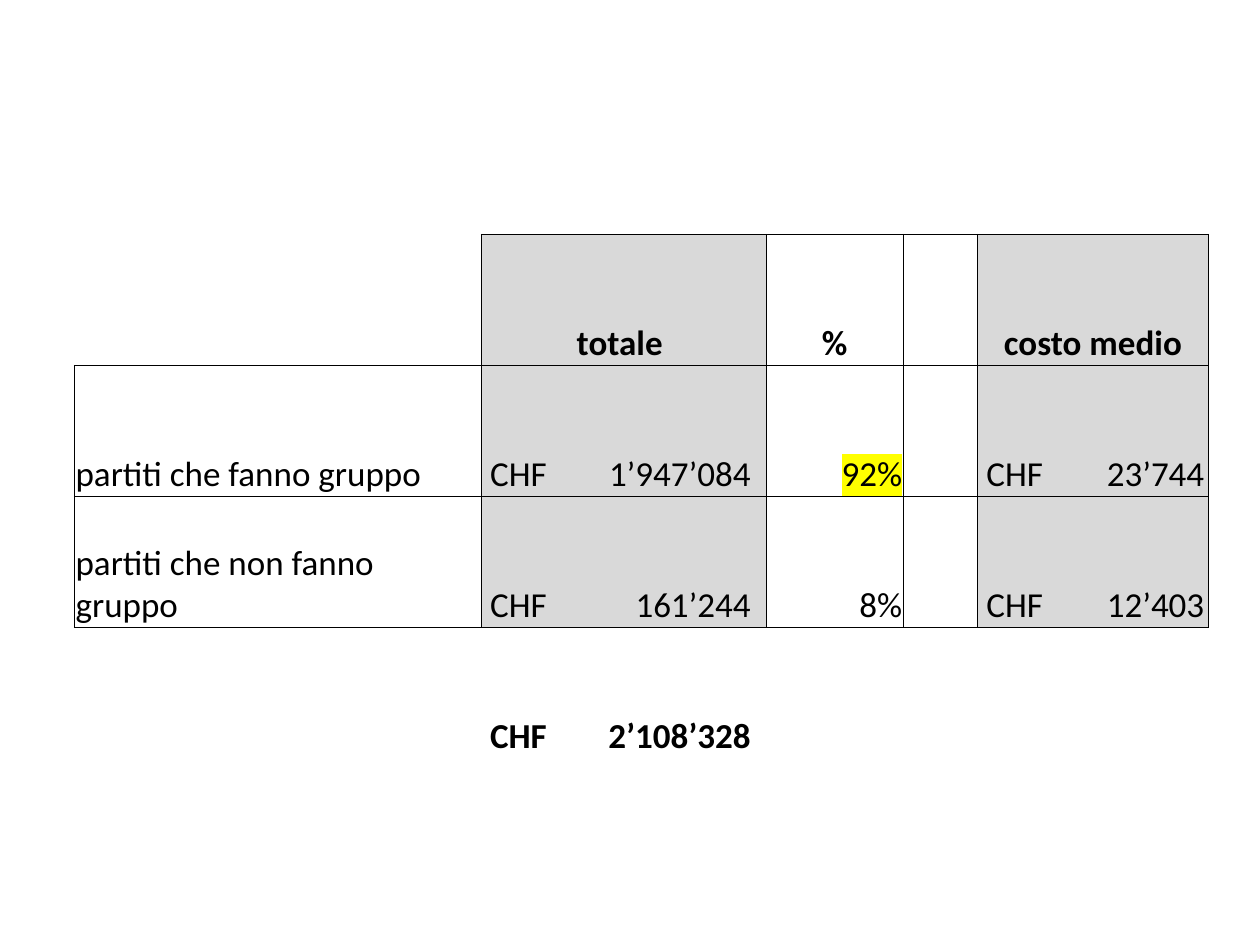
from lxml.etree import SubElement
from pptx import Presentation
from pptx.dml.color import RGBColor
from pptx.enum.text import MSO_ANCHOR, PP_ALIGN
from pptx.oxml.ns import qn
from pptx.util import Inches, Pt

COLORS = {"text": "000000", "border": "000000", "shade": "D9D9D9", "highlight": "FFFF00"}
COLUMN_WIDTHS = [3.23, 2.26, 1.09, 0.59, 1.83]
ROW_HEIGHT = 1.04
TABLE_LEFT, TABLE_TOP = 0.59, 1.86
CELL_INSET, AMOUNT_INSET = 0.01, 0.07
AMOUNT_TABS = {1: 2.07, 4: 1.73}
SIDES = {"a:lnL": (0, -1), "a:lnR": (0, 1), "a:lnT": (-1, 0), "a:lnB": (1, 0)}
ROWS = [
    ["", "totale ", "%", "", "costo medio"],
    ["partiti che fanno gruppo", "CHF\t1’947’084", "92%", "", "CHF\t23’744"],
    ["partiti che non fanno gruppo", "CHF\t161’244", "8%", "", "CHF\t12’403"],
    ["", "CHF\t2’108’328", "", "", ""],
]
HEADER_ROW, TOTAL_ROW = 0, len(ROWS) - 1
PERCENT_COLUMN = 2


def is_framed(row, column):
    """Tell whether a grid position belongs to the ruled part of the table."""
    first_column = 1 if row == HEADER_ROW else 0
    return HEADER_ROW <= row < TOTAL_ROW and first_column <= column < len(COLUMN_WIDTHS)


def draw_borders(cell, row, column):
    """Rule every side of a cell that touches the framed area."""
    properties = cell._tc.get_or_add_tcPr()
    for tag, (row_step, column_step) in SIDES.items():
        line = SubElement(properties, qn(tag), w=str(Pt(0.5)))
        if is_framed(row, column) or is_framed(row + row_step, column + column_step):
            fill = SubElement(line, qn("a:solidFill"))
            SubElement(fill, qn("a:srgbClr"), val=COLORS["border"])
        else:
            SubElement(line, qn("a:noFill"))


def fill_cell(cell, row, column):
    """Shade the amount columns and leave the other cells clear."""
    if is_framed(row, column) and column in AMOUNT_TABS:
        cell.fill.solid()
        cell.fill.fore_color.rgb = RGBColor.from_string(COLORS["shade"])
    else:
        cell.fill.background()


def add_right_tab(paragraph, position):
    """Add a right-aligned tab stop to a paragraph."""
    tabs = SubElement(paragraph._p.get_or_add_pPr(), qn("a:tabLst"))
    SubElement(tabs, qn("a:tab"), pos=str(Inches(position)), algn="r")


def format_run(run, bold, highlighted):
    """Set the font of a run and its optional highlight."""
    run.font.size = Pt(20)
    run.font.bold = bold
    run.font.color.rgb = RGBColor.from_string(COLORS["text"])
    if highlighted:
        highlight = SubElement(run._r.get_or_add_rPr(), qn("a:highlight"))
        SubElement(highlight, qn("a:srgbClr"), val=COLORS["highlight"])
    run.font.name = "Calibri"


def write_cell(cell, row, column, text):
    """Write a cell's text with the alignment of its row and column."""
    is_amount = "\t" in text
    cell.vertical_anchor = MSO_ANCHOR.BOTTOM
    cell.margin_left = Inches(AMOUNT_INSET if is_amount else CELL_INSET)
    cell.margin_right = cell.margin_top = Inches(CELL_INSET)
    cell.margin_bottom = 0
    paragraph = cell.text_frame.paragraphs[0]
    paragraph.text = text
    if row == HEADER_ROW:
        paragraph.alignment = PP_ALIGN.CENTER
    elif column == PERCENT_COLUMN:
        paragraph.alignment = PP_ALIGN.RIGHT
    else:
        paragraph.alignment = PP_ALIGN.LEFT
    if is_amount:
        add_right_tab(paragraph, AMOUNT_TABS[column])
    for run in paragraph.runs:
        format_run(run, row in (HEADER_ROW, TOTAL_ROW), text == "92%")


def add_cost_table(slide):
    """Add the table of party costs."""
    shape = slide.shapes.add_table(
        len(ROWS), len(COLUMN_WIDTHS), Inches(TABLE_LEFT), Inches(TABLE_TOP),
        Inches(sum(COLUMN_WIDTHS)), Inches(ROW_HEIGHT * len(ROWS)))
    table = shape.table
    table.first_row = table.horz_banding = False
    for column, width in zip(table.columns, COLUMN_WIDTHS):
        column.width = Inches(width)
    for row, texts in enumerate(ROWS):
        table.rows[row].height = Inches(ROW_HEIGHT)
        for column, text in enumerate(texts):
            cell = table.cell(row, column)
            draw_borders(cell, row, column)
            fill_cell(cell, row, column)
            if text:
                write_cell(cell, row, column, text)


def main():
    """Build and save the presentation."""
    presentation = Presentation()
    presentation.slide_width, presentation.slide_height = Inches(10), Inches(7.5)
    slide = presentation.slides.add_slide(presentation.slide_layouts[6])
    add_cost_table(slide)
    presentation.save("out.pptx")


if __name__ == "__main__":
    main()
